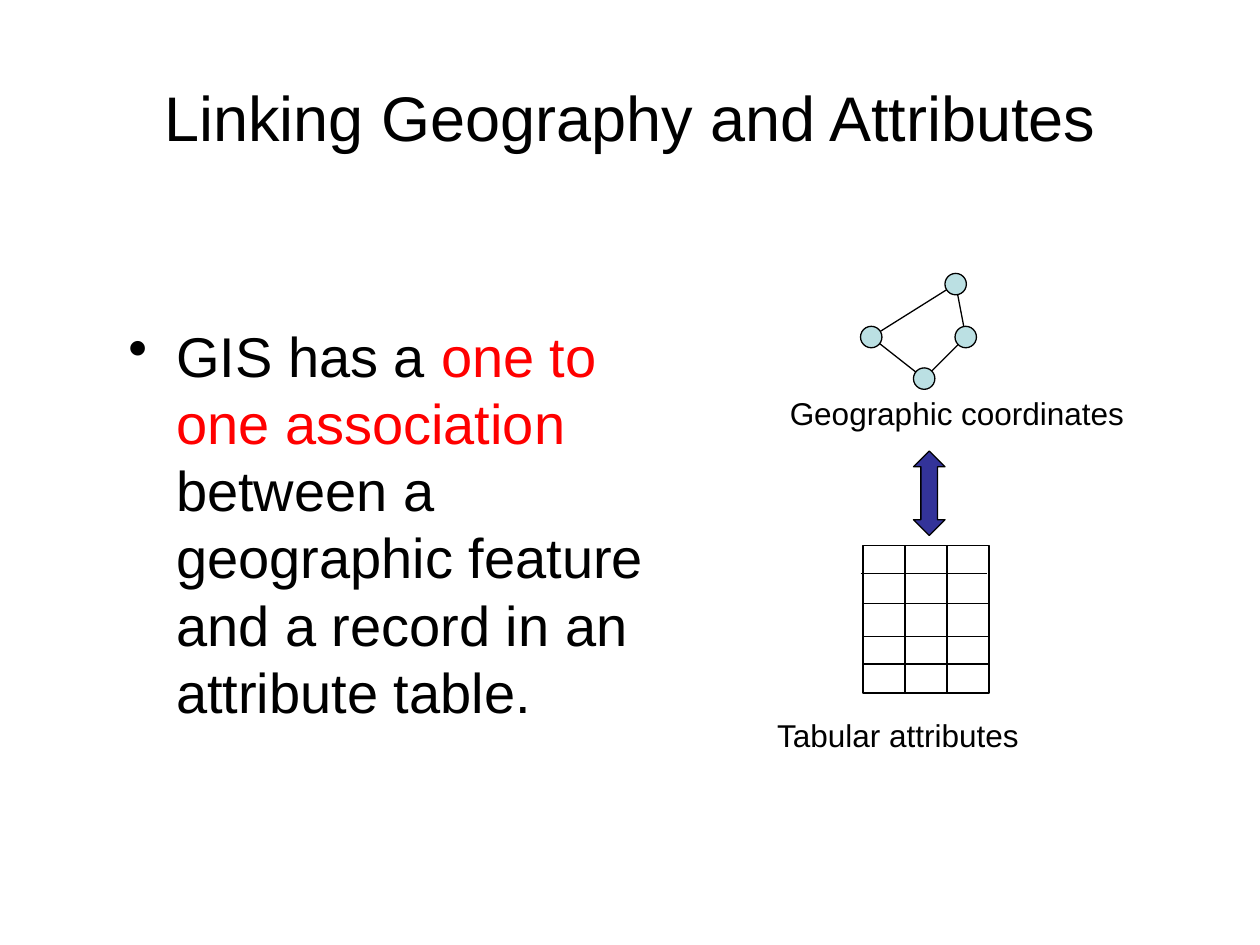
import pptx
import pptx.util
import pptx.dml.color
import pptx.enum.shapes
import pptx.enum.text
import pptx.oxml.ns
import lxml.etree

Inches = pptx.util.Inches
Pt = pptx.util.Pt
SHAPES = pptx.enum.shapes.MSO_SHAPE
BLACK = "000000"


def color(value):
    return pptx.dml.color.RGBColor.from_string(value)


def add_text(slide, box, runs, size):
    shape = slide.shapes.add_textbox(*map(Inches, box))
    shape.text_frame.word_wrap = True
    paragraph = shape.text_frame.paragraphs[0]
    paragraph.font.name = "Arial"
    paragraph.font.size = Pt(size)
    for text, text_color in runs:
        run = paragraph.add_run()
        run.text = text
        run.font.color.rgb = color(text_color)
    return shape


def add_line(shapes, start, end):
    line = shapes.add_connector(
        pptx.enum.shapes.MSO_CONNECTOR.STRAIGHT, *map(Inches, (*start, *end)))
    line.line.color.rgb = color(BLACK)
    line.line.width = Pt(0.75)
    lxml.etree.SubElement(line.element.spPr, pptx.oxml.ns.qn("a:effectLst"))


def add_outlined(shapes, kind, box, fill=None):
    shape = shapes.add_shape(kind, *map(Inches, box))
    shape.shadow.inherit = False
    if fill:
        shape.fill.solid()
        shape.fill.fore_color.rgb = color(fill)
    else:
        shape.fill.background()
    shape.line.color.rgb = color(BLACK)
    shape.line.width = Pt(0.75)
    return shape


def add_title(slide, box):
    title = add_text(slide, box, [("Linking Geography and Attributes", BLACK)], 36)
    title.text_frame.vertical_anchor = pptx.enum.text.MSO_ANCHOR.MIDDLE
    title.text_frame.paragraphs[0].alignment = pptx.enum.text.PP_ALIGN.CENTER


def add_body(slide, box):
    body = add_text(slide, box, [
        ("GIS has a ", BLACK),
        ("one to one association ", "FF0000"),
        ("between a geographic feature and a record in an attribute table.", BLACK),
    ], 32)
    paragraph = body.text_frame.paragraphs[0]
    paragraph.space_before = Pt(6.4)
    paragraph.line_spacing = Pt(38.4)
    properties = paragraph._p.get_or_add_pPr()
    properties.set("marL", str(Inches(0.38)))
    properties.set("indent", str(Inches(-0.38)))
    bullet = pptx.oxml.parse_xml(
        f'<a:buChar {pptx.oxml.ns.nsdecls("a")} char="•"/>')
    properties.find(pptx.oxml.ns.qn("a:spcBef")).addnext(bullet)


def add_polygon(slide, box):
    left, top, width, height = box
    diameter = 0.17
    radius = diameter / 2
    offsets = [(0, 0.42), (0.42, 0.75), (0.75, 0.42), (0.67, 0)]
    nodes = [(left + radius + x, top + radius + y) for x, y in offsets]
    shapes = slide.shapes.add_group_shape().shapes
    for start, end in zip(nodes, nodes[1:] + nodes[:1]):
        add_line(shapes, start, end)
    for x, y in nodes:
        add_outlined(shapes, SHAPES.OVAL,
                     (x - radius, y - radius, diameter, diameter), "BBE0E3")


def add_attribute_grid(slide, box):
    left, top, width, height = box
    shapes = slide.shapes.add_group_shape().shapes
    add_outlined(shapes, SHAPES.RECTANGLE, box)
    for shift, y in [(-0.02, 0.22), (-0.01, 0.46), (0.01, 0.72), (0.01, 0.94)]:
        add_line(shapes, (left + shift, top + y), (left + shift + width, top + y))
    for column in (1, 2):
        x = left + column * width / 3
        add_line(shapes, (x, top), (x, top + height))


def add_link_arrow(slide, box):
    arrow = add_outlined(slide.shapes, SHAPES.UP_DOWN_ARROW, box, "333399")
    arrow.adjustments[0] = 0.5
    arrow.adjustments[1] = 0.53


def main():
    presentation = pptx.Presentation()
    presentation.slide_width = Inches(10)
    presentation.slide_height = Inches(7.5)
    slide = presentation.slides.add_slide(presentation.slide_layouts[6])
    add_title(slide, (0.5, 0.3, 9, 1.25))
    add_body(slide, (0.92, 2.5, 4.56, 3.39))
    add_polygon(slide, (6.83, 2.17, 0.92, 0.92))
    add_attribute_grid(slide, (6.85, 4.33, 1, 1.17))
    add_text(slide, (6.17, 3.08, 3.37, 0.9), [("Geographic coordinates", BLACK)], 18)
    add_text(slide, (6.07, 5.63, 2.56, 0.5), [("Tabular attributes", BLACK)], 18)
    add_link_arrow(slide, (7.25, 3.58, 0.25, 0.67))
    presentation.save("out.pptx")


if __name__ == "__main__":
    main()
